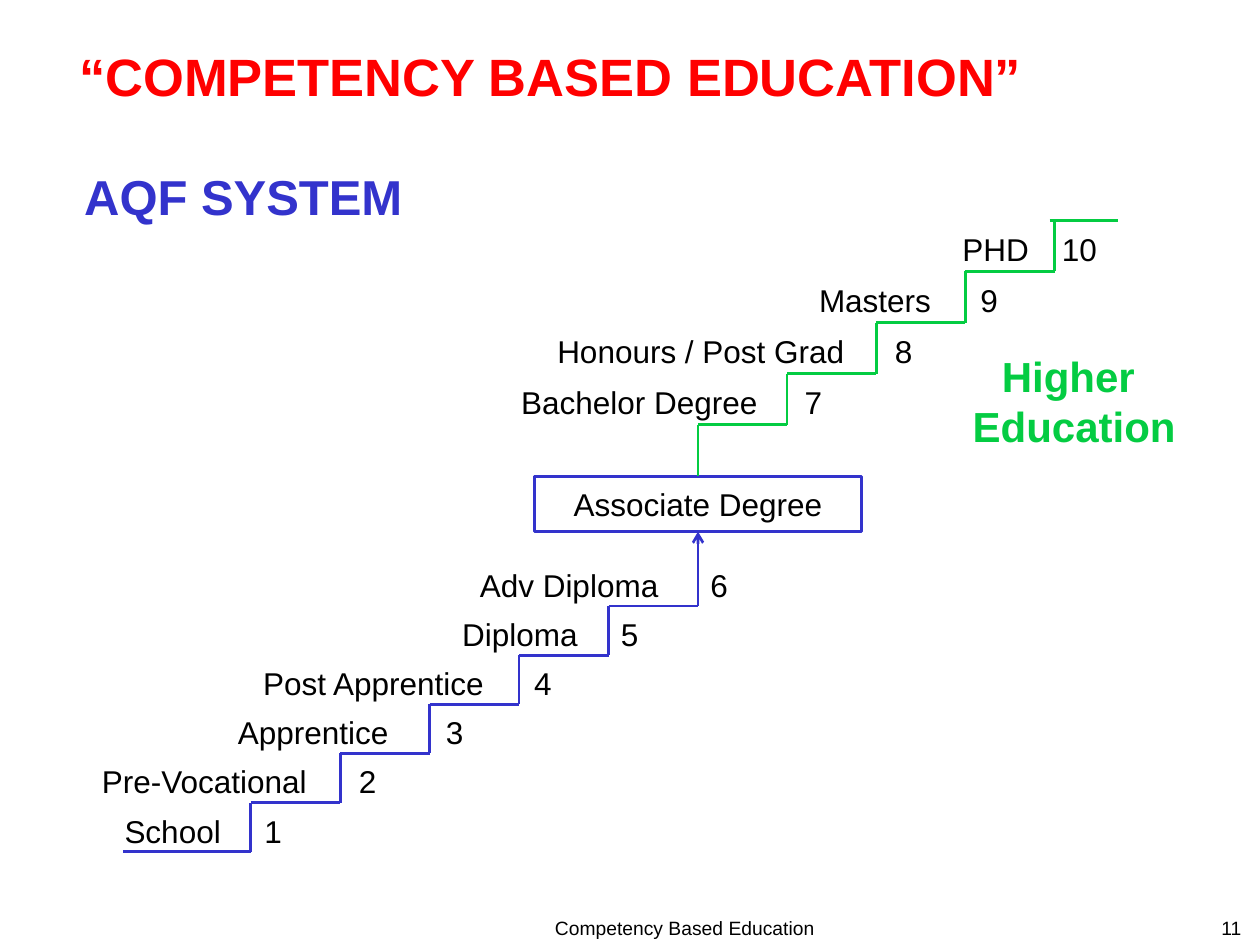
from lxml import etree
from pptx import Presentation
from pptx.dml.color import RGBColor
from pptx.enum import shapes, text
from pptx.oxml.ns import qn
from pptx.util import Inches, Pt

RED = RGBColor(0xFF, 0x00, 0x00)
BLUE = RGBColor(0x33, 0x33, 0xCC)
GREEN = RGBColor(0x04, 0xCC, 0x42)
BLACK = RGBColor(0x00, 0x00, 0x00)

LEFT, CENTER, RIGHT = text.PP_ALIGN.LEFT, text.PP_ALIGN.CENTER, text.PP_ALIGN.RIGHT

VOCATIONAL = [
    ("School", 1.1, 0.01),
    ("Pre-Vocational", 1.99, 0.05),
    ("Apprentice", 1.62, 0.03),
    ("Post Apprentice", 2.13, 0.02),
    ("Diploma", 1.26, 0),
    ("Adv Diploma", 1.83, 0),
]
HIGHER = [
    ("Bachelor Degree", 2.21, 0.04),
    ("Honours / Post Grad", 2.63, 0.05),
    ("Masters", 1.26, 0.02),
    ("PHD", 0.83, -0.04),
]


def write(frame, lines, size, color=BLACK, bold=False, align=LEFT):
    frame.word_wrap = True
    for index, line in enumerate(lines):
        paragraph = frame.paragraphs[0] if index == 0 else frame.add_paragraph()
        paragraph.alignment = align
        run = paragraph.add_run()
        run.text = line
        for name, value in {"name": "Arial", "size": Pt(size), "bold": bold}.items():
            setattr(run.font, name, value)
        run.font.color.rgb = color


def place_text(slide, box, lines, size, **style):
    frame = slide.shapes.add_textbox(*map(Inches, box)).text_frame
    frame.margin_top = Inches(0.05 + size * 0.0012)
    write(frame, lines, size, **style)


def draw_line(slide, start, end, color):
    line = slide.shapes.add_connector(
        shapes.MSO_CONNECTOR.STRAIGHT, *map(Inches, (*start, *end)))
    line.line.color.rgb = color
    line.line.width = Pt(1.5)
    etree.SubElement(line._element.spPr, qn("a:effectLst"))
    return line


def build_gate(slide, box):
    gate = slide.shapes.add_shape(shapes.MSO_SHAPE.RECTANGLE, *map(Inches, box))
    gate.shadow.inherit = False
    gate.fill.background()
    gate.line.color.rgb = BLUE
    gate.line.width = Pt(1.5)
    gate.text_frame.vertical_anchor = text.MSO_ANCHOR.MIDDLE
    write(gate.text_frame, ["Associate Degree"], 18, align=CENTER)
    return gate


def build_flight(slide, box, levels, first_number, color, entry=0, gate=None):
    left, top, width, height = box
    run, rise = width / len(levels), height / len(levels)
    for step, (name, reach, nudge) in enumerate(levels):
        start = left + run * step - (entry if step == 0 else 0)
        riser = left + run * (step + 1)
        base = top + height - rise * step
        landing = base - rise
        draw_line(slide, (start, base), (riser, base), color)
        climb = draw_line(slide, (riser, base), (riser, landing), color)
        if gate is not None and step == len(levels) - 1:
            climb.end_connect(gate, 2)
            arrow = etree.SubElement(climb.line._get_or_add_ln(), qn("a:tailEnd"))
            arrow.set("type", "arrow")
        place_text(slide, (riser - reach, landing, reach, 0.35), [name], 18)
        place_text(slide, (riser + nudge, landing, 0.54, 0.35),
                   [str(first_number + step)], 18)


def build_staircase(slide, box):
    left, top, width, height = box
    middle = left + 4.56
    gate = build_gate(slide, (middle - 1.3, top + 2.03, 2.6, 0.44))
    build_flight(slide, (left + 0.3, top + 2.67, 4.26, 2.34), VOCATIONAL, 1,
                 BLUE, entry=0.3, gate=gate)
    build_flight(slide, (middle, top, 2.83, 1.62), HIGHER, 7, GREEN)
    link = draw_line(slide, (middle, top + 2.03), (middle, top + 1.62), GREEN)
    link.begin_connect(gate, 0)
    draw_line(slide, (left + width - 0.54, top), (left + width, top), GREEN)
    place_text(slide, (left + 6.5, top + 0.95, 2.09, 0.85),
               ["Higher ", "Education"], 24, color=GREEN, bold=True, align=CENTER)


def build_headings(slide, box):
    left, top, width, height = box
    place_text(slide, (left, top, width, 0.98), ["“COMPETENCY BASED EDUCATION”"],
               30, color=RED, bold=True)
    place_text(slide, (left + 0.04, top + 0.98, 4.03, 0.61), ["AQF SYSTEM"],
               28, color=BLUE, bold=True)


def build_footer(slide, box):
    left, top, width, height = box
    place_text(slide, (left, top, 4.19, height), ["Competency Based Education"],
               11, align=CENTER)
    place_text(slide, (left + width - 2.33, top, 2.33, height), ["11"],
               11, align=RIGHT)


def main():
    deck = Presentation()
    deck.slide_width, deck.slide_height = Inches(10), Inches(7.5)
    slide = deck.slides.add_slide(deck.slide_layouts[6])
    build_headings(slide, (0.53, 0.26, 9, 1.59))
    build_staircase(slide, (0.98, 1.75, 7.89, 5.01))
    build_footer(slide, (3.34, 7.21, 6.61, 0.24))
    deck.save("out.pptx")


if __name__ == "__main__":
    main()
